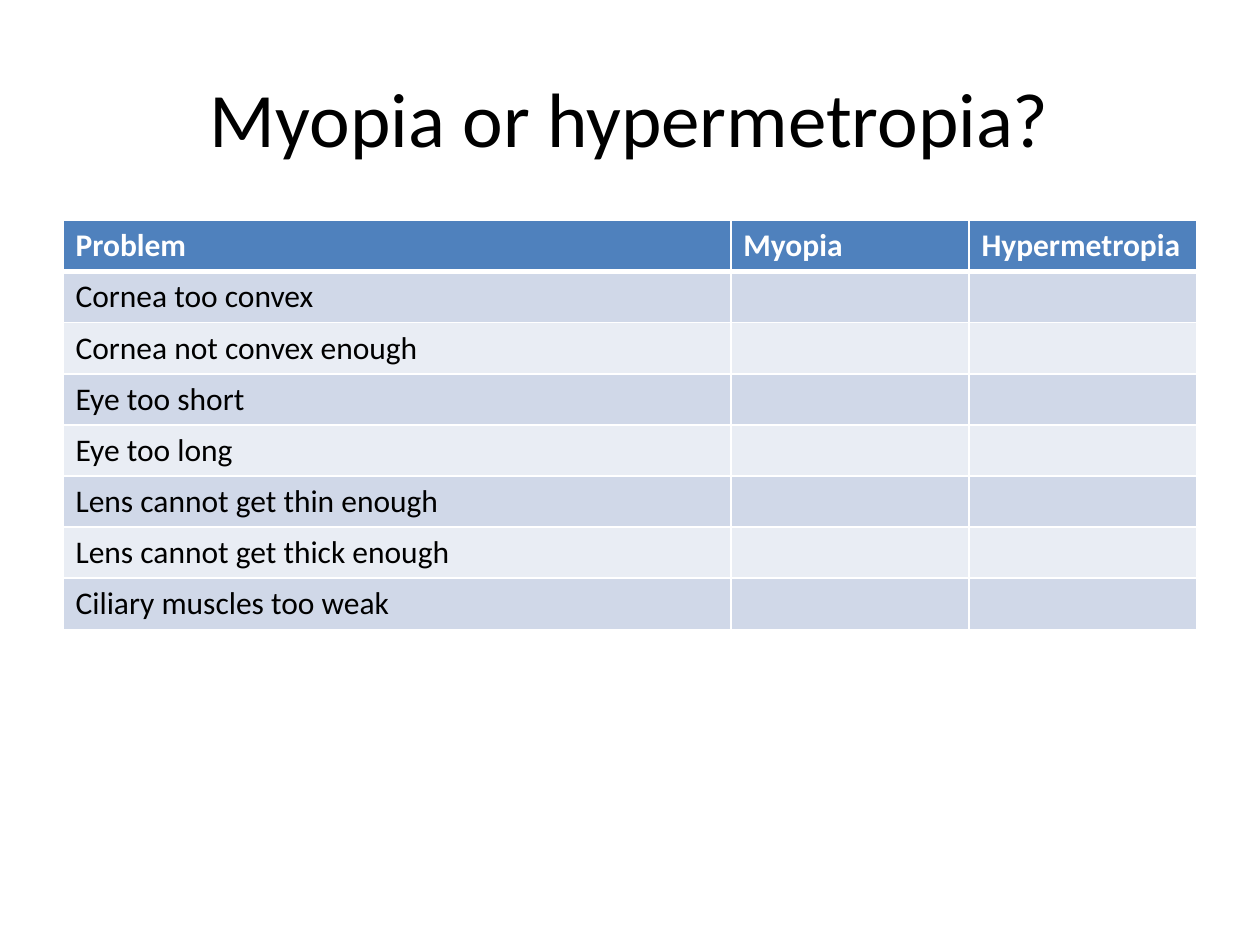
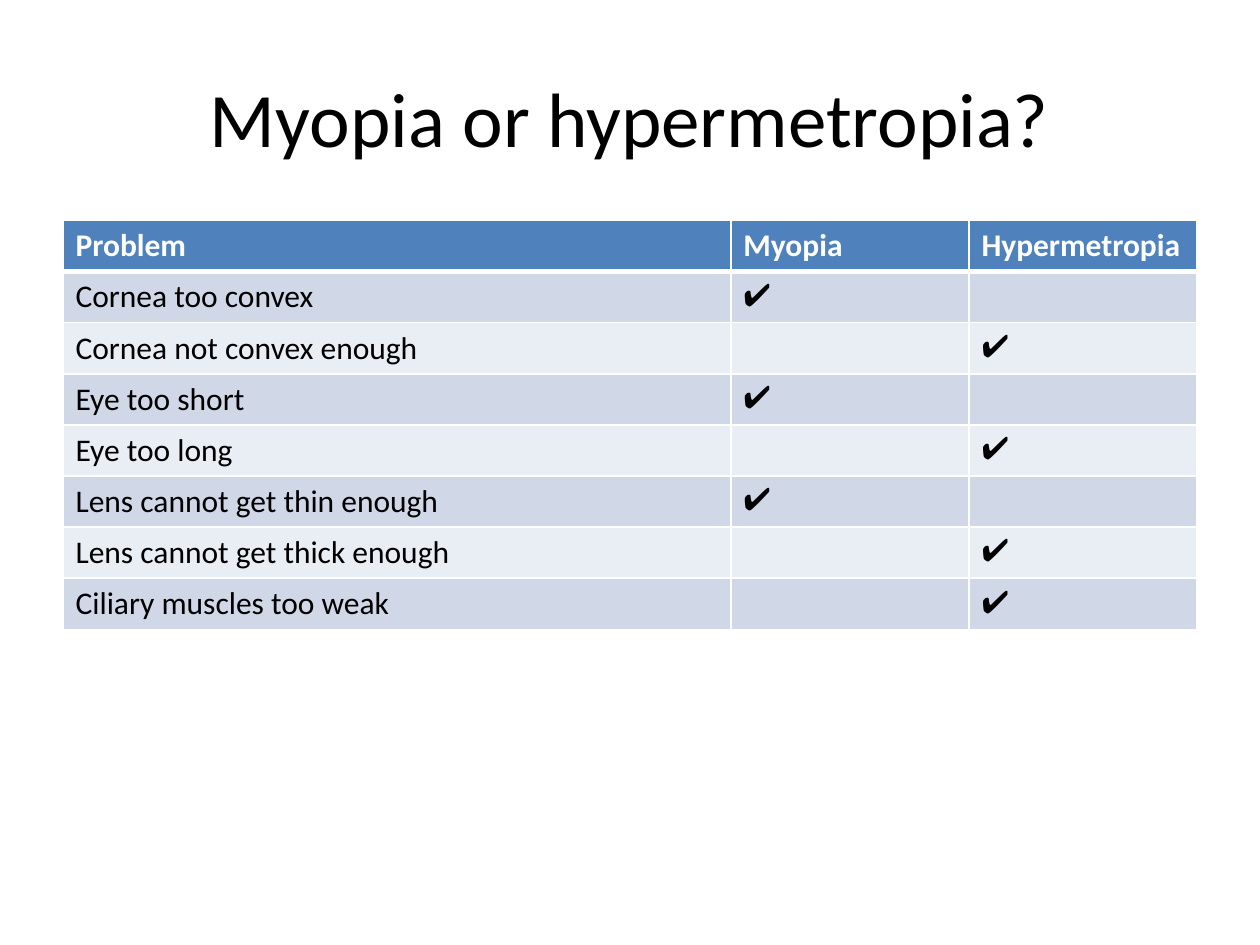
"""Build a myopia or hypermetropia quiz: the question table, then its answers."""
import pptx
import pptx.dml.color
import pptx.enum.text
import pptx.oxml.ns
import pptx.util
from lxml import etree

Inches, Pt = pptx.util.Inches, pptx.util.Pt
RGBColor = pptx.dml.color.RGBColor
PP_ALIGN = pptx.enum.text.PP_ALIGN

TITLE = "Myopia or hypermetropia?"
HEADERS = ("Problem", "Myopia", "Hypermetropia")
ANSWERS = (
    ("Cornea too convex", "Myopia"),
    ("Cornea not convex enough", "Hypermetropia"),
    ("Eye too short", "Myopia"),
    ("Eye too long", "Hypermetropia"),
    ("Lens cannot get thin enough", "Myopia"),
    ("Lens cannot get thick enough", "Hypermetropia"),
    ("Ciliary muscles too weak", "Hypermetropia"),
)
TICK = "✔"

BLACK = RGBColor(0x00, 0x00, 0x00)
WHITE = RGBColor(0xFF, 0xFF, 0xFF)
HEADER_BLUE = RGBColor(0x4F, 0x81, 0xBD)
BANDS = (RGBColor(0xD0, 0xD8, 0xE8), RGBColor(0xE9, 0xED, 0xF4))

LEFT, WIDTH = Inches(0.5), Inches(9)
TITLE_TOP, TITLE_HEIGHT = Inches(0.3), Inches(1.25)
TABLE_TOP, TABLE_HEIGHT = Inches(1.75), Inches(3.24)
COLUMN_WIDTHS = (Inches(5.3), Inches(1.89), Inches(1.81))


def write(tf, text, size=18, font="Calibri", color=BLACK, bold=False, align=PP_ALIGN.LEFT):
    p = tf.paragraphs[0]
    p.alignment = align
    r = p.add_run()
    r.text = text
    r.font.size, r.font.name, r.font.bold = Pt(size), font, bold
    r.font.color.rgb = color


def set_borders(cell, top=1, bottom=1):
    tcPr = cell._tc.get_or_add_tcPr()
    for side, width in (("L", 1), ("R", 1), ("T", top), ("B", bottom)):
        ln = etree.SubElement(tcPr, pptx.oxml.ns.qn(f"a:ln{side}"), w=str(Pt(width)))
        fill = etree.SubElement(ln, pptx.oxml.ns.qn("a:solidFill"))
        etree.SubElement(fill, pptx.oxml.ns.qn("a:srgbClr"), val=str(WHITE))


def fill_cell(cell, text, fill, top=1, bottom=1, **style):
    set_borders(cell, top, bottom)
    cell.fill.solid()
    cell.fill.fore_color.rgb = fill
    if text:
        write(cell.text_frame, text, **style)


def add_title(s):
    sp = s.shapes.title
    sp.left, sp.top, sp.width, sp.height = LEFT, TITLE_TOP, WIDTH, TITLE_HEIGHT
    sp.text_frame.vertical_anchor = pptx.enum.text.MSO_ANCHOR.MIDDLE
    write(sp.text_frame, TITLE, size=44, align=PP_ALIGN.CENTER)


def add_problem_table(s, show_answers):
    table = s.shapes.add_table(
        len(ANSWERS) + 1, len(HEADERS), LEFT, TABLE_TOP, WIDTH, TABLE_HEIGHT
    ).table
    for column, width in zip(table.columns, COLUMN_WIDTHS):
        column.width = width
    for col, header in enumerate(HEADERS):
        fill_cell(table.cell(0, col), header, HEADER_BLUE, bottom=3, color=WHITE, bold=True)
    for row, (problem, answer) in enumerate(ANSWERS, 1):
        band = BANDS[(row - 1) % 2]
        top = 3 if row == 1 else 1
        fill_cell(table.cell(row, 0), problem, band, top=top)
        for col, condition in enumerate(HEADERS[1:], 1):
            mark = TICK if show_answers and condition == answer else ""
            fill_cell(table.cell(row, col), mark, band, top=top, font="Arial")


def main():
    prs = pptx.Presentation()
    prs.slide_width, prs.slide_height = Inches(10), Inches(7.5)
    for show_answers in (False, True):
        s = prs.slides.add_slide(prs.slide_layouts[5])
        add_title(s)
        add_problem_table(s, show_answers)
    prs.save("out.pptx")


if __name__ == "__main__":
    main()
